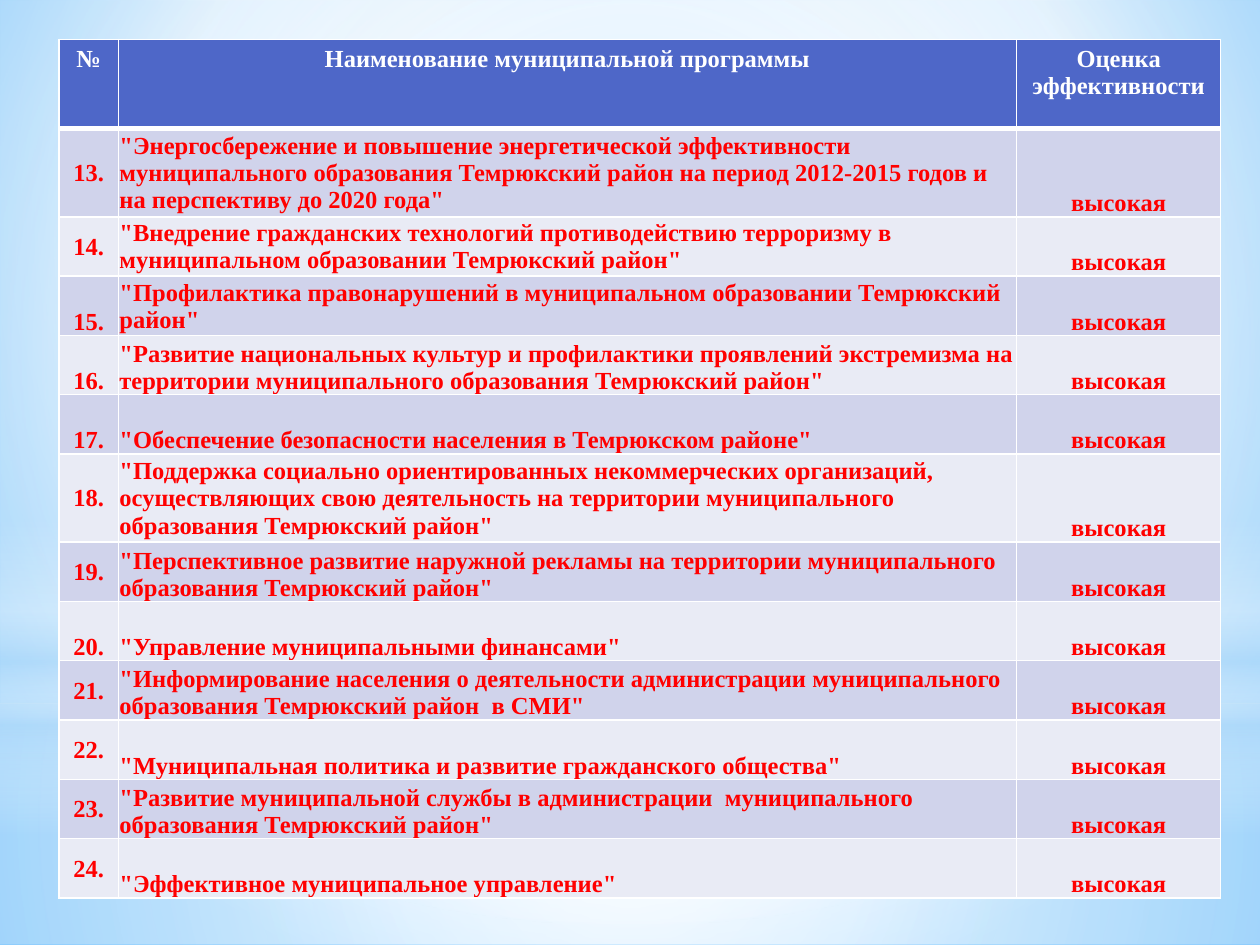
from lxml import etree
from pptx import Presentation
from pptx import util as u
from pptx.dml.color import RGBColor
from pptx.enum import shapes, text
from pptx.oxml.ns import qn

Pt = u.Pt
WHITE = RGBColor(0xFF, 0xFF, 0xFF)
RED = RGBColor(0xFF, 0x00, 0x00)
HEADER_BLUE = RGBColor(0x4E, 0x67, 0xC8)
BAND_DARK = RGBColor(0xD0, 0xD3, 0xEB)
BAND_LIGHT = RGBColor(0xE9, 0xEB, 0xF5)
SKY = RGBColor(0x9E, 0xD5, 0xFF)
DEEP_SKY = RGBColor(0x5B, 0xB9, 0xFF)
PALE_SKY = RGBColor(0xB4, 0xDC, 0xFA)

FONT = "Times New Roman"
LEFT, MIDDLE, BOTTOM = "left", text.MSO_ANCHOR.MIDDLE, text.MSO_ANCHOR.BOTTOM
CENTER, JUSTIFY = text.PP_ALIGN.CENTER, text.PP_ALIGN.JUSTIFY
LEFT = text.PP_ALIGN.LEFT


def set_gradient(properties, stops, focus=None):
    """Replace a solid fill; stops are (position, colour, opacity) in percent."""
    gradient = etree.Element(qn("a:gradFill"), rotWithShape="1")
    stop_list = etree.SubElement(gradient, qn("a:gsLst"))
    for position, color, opacity in stops:
        stop = etree.SubElement(stop_list, qn("a:gs"), pos=str(position * 1000))
        tint = etree.SubElement(stop, qn("a:srgbClr"), val=str(color))
        if opacity < 100:
            etree.SubElement(tint, qn("a:alpha"), val=str(opacity * 1000))
    if focus:
        circle = etree.SubElement(gradient, qn("a:path"), path="circle")
        sides = {side: str(share * 1000) for side, share in zip("ltrb", focus)}
        etree.SubElement(circle, qn("a:fillToRect"), **sides)
    else:
        etree.SubElement(gradient, qn("a:lin"), ang="5400000", scaled="0")
    properties.replace(properties.find(qn("a:solidFill")), gradient)


def set_borders(cell, top, bottom):
    """Draw white borders; top and bottom are widths in points."""
    properties = cell._tc.get_or_add_tcPr()
    for side, width in (("L", 1), ("R", 1), ("T", top), ("B", bottom)):
        line = etree.SubElement(properties, qn("a:ln" + side), w=str(Pt(width)))
        fill = etree.SubElement(line, qn("a:solidFill"))
        etree.SubElement(fill, qn("a:srgbClr"), val=str(WHITE))


deck = Presentation()
deck.slide_width, deck.slide_height = Pt(720), Pt(540)
page = deck.slides.add_slide(deck.slide_layouts[6])

# Background
page.background.fill.solid()
set_gradient(page._element.find(".//" + qn("p:bgPr")),
             [(0, SKY, 100), (60, WHITE, 100), (100, DEEP_SKY, 100)],
             (20, 10, 20, 60))

# Soft light layers: shape, top, height, stops, focus
RECTANGLE, OVAL = shapes.MSO_SHAPE.RECTANGLE, shapes.MSO_SHAPE.OVAL
MIDPOINT = (50, 50, 50, 50)
layers = [
    (RECTANGLE, 402, 138,
     [(0, WHITE, 91), (37, WHITE, 76), (100, PALE_SKY, 79)], MIDPOINT),
    (RECTANGLE, 0, 402,
     [(0, WHITE, 89), (48, WHITE, 62), (100, PALE_SKY, 79)], MIDPOINT),
    (RECTANGLE, 297, 180,
     [(0, WHITE, 0), (29, WHITE, 30), (45, PALE_SKY, 40), (55, WHITE, 26),
      (65, PALE_SKY, 60), (100, WHITE, 0)], None),
    (OVAL, 126, 402, [(0, WHITE, 100), (56, WHITE, 0)], MIDPOINT),
]
for kind, top, height, stops, focus in layers:
    layer = page.shapes.add_shape(kind, 0, Pt(top), deck.slide_width, Pt(height))
    layer.shadow.inherit = False
    layer.line.fill.background()
    layer.fill.solid()
    set_gradient(layer._element.spPr, stops, focus)

# Table content: programme name, anchor of the number, anchor of the name
header = ["№", "Наименование муниципальной программы", "Оценка эффективности"]
FIRST_NUMBER = 13
programs = [
    ('"Энергосбережение и повышение энергетической эффективности муниципального '
     'образования Темрюкский район на период 2012-2015 годов и на перспективу '
     'до 2020 года"', MIDDLE, MIDDLE),
    ('"Внедрение гражданских технологий противодействию терроризму в '
     'муниципальном образовании Темрюкский район"', MIDDLE, MIDDLE),
    ('"Профилактика правонарушений в муниципальном образовании Темрюкский '
     'район"', BOTTOM, MIDDLE),
    ('"Развитие национальных культур и профилактики проявлений экстремизма на '
     'территории муниципального образования Темрюкский район"', BOTTOM, BOTTOM),
    ('"Обеспечение безопасности населения в Темрюкском районе"', BOTTOM, BOTTOM),
    ('"Поддержка социально ориентированных некоммерческих организаций, '
     'осуществляющих свою деятельность на территории муниципального '
     'образования Темрюкский район"', MIDDLE, MIDDLE),
    ('"Перспективное развитие наружной рекламы на территории муниципального '
     'образования Темрюкский район"', MIDDLE, BOTTOM),
    ('"Управление муниципальными финансами"', BOTTOM, BOTTOM),
    ('"Информирование населения о деятельности администрации муниципального '
     'образования Темрюкский район  в СМИ"', MIDDLE, BOTTOM),
    ('"Муниципальная политика и развитие гражданского общества"', MIDDLE, BOTTOM),
    ('"Развитие муниципальной службы в администрации  муниципального '
     'образования Темрюкский район"', MIDDLE, BOTTOM),
    ('"Эффективное муниципальное управление"', MIDDLE, BOTTOM),
]
rows = [[(title, CENTER, None) for title in header]]
for number, (name, number_anchor, name_anchor) in enumerate(programs, FIRST_NUMBER):
    name_align = JUSTIFY if number == 24 else LEFT
    rows.append([(f"{number}.", CENTER, number_anchor),
                 (name, name_align, name_anchor),
                 ("высокая", CENTER, BOTTOM)])

# Table grid
column_widths = [33.8, 513.4, 116.6]
row_heights = [33.9] * len(rows)
row_heights[0] = 51
row_heights[1] = row_heights[6] = 50.4
table = page.shapes.add_table(len(rows), len(column_widths), Pt(33.8), Pt(22.5),
                              Pt(sum(column_widths)), Pt(sum(row_heights))).table
for column, width in zip(table.columns, column_widths):
    column.width = Pt(width)
for row, height in zip(table.rows, row_heights):
    row.height = Pt(height)

# Table cells
for i, row in enumerate(rows):
    for j, (content, align, anchor) in enumerate(row):
        cell = table.cell(i, j)
        set_borders(cell, 3 if i == 1 else 1, 3 if i == 0 else 1)
        cell.fill.solid()
        if i == 0:
            cell.fill.fore_color.rgb = HEADER_BLUE
        else:
            cell.fill.fore_color.rgb = BAND_DARK if i % 2 else BAND_LIGHT
            cell.margin_left = cell.margin_right = cell.margin_top = Pt(0.7)
            cell.margin_bottom = 0
            cell.vertical_anchor = anchor
        cell.text = content
        para = cell.text_frame.paragraphs[0]
        para.alignment = align
        para.font.name, para.font.size, para.font.bold = FONT, Pt(14), True
        para.font.color.rgb = RED if i else WHITE

deck.save("out.pptx")
